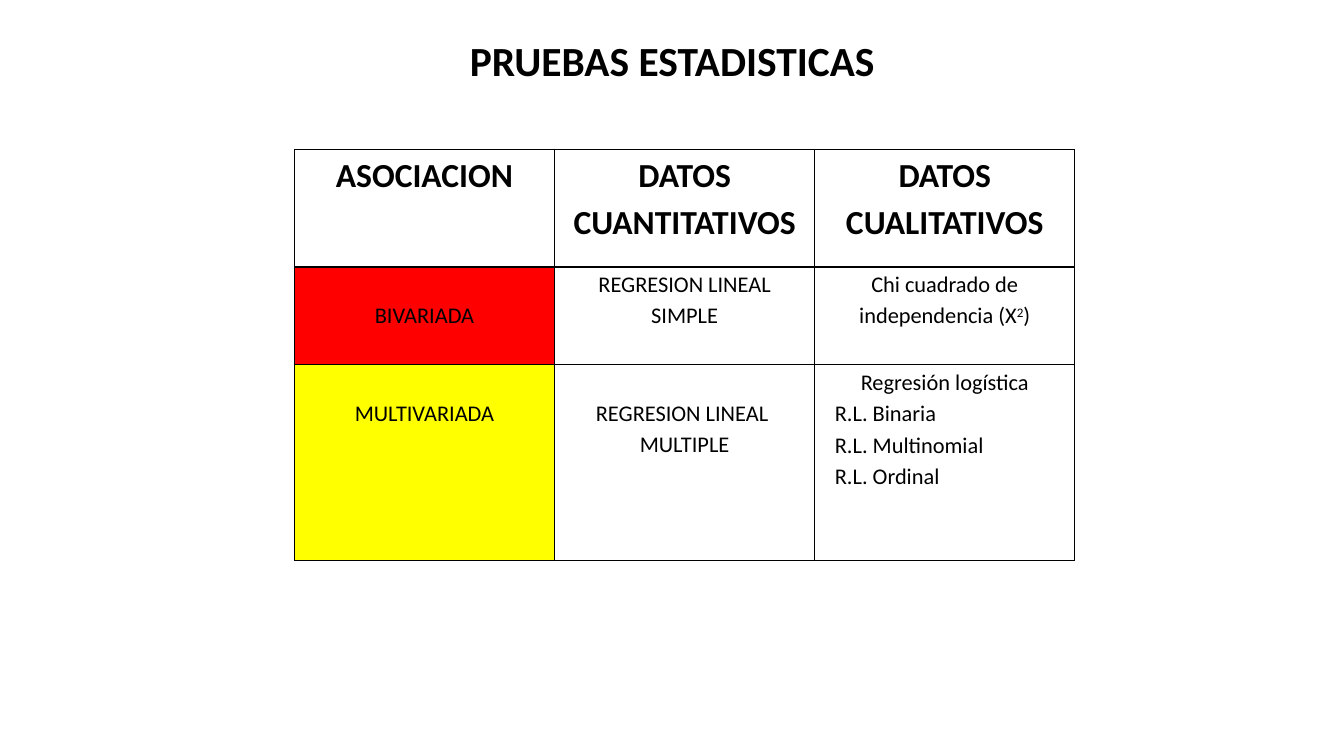
"""Build a slide with a table of statistical tests by kind of association."""
from dataclasses import dataclass

from lxml.etree import SubElement
from pptx import Presentation
from pptx.dml.color import RGBColor as Color
from pptx.enum.text import MSO_ANCHOR as Anchor, MSO_AUTO_SIZE as AutoSize, PP_ALIGN as Align
from pptx.oxml.ns import qn
from pptx.util import Inches, Pt


@dataclass(frozen=True)
class Theme:
    """Colours, type sizes and spacing of the slide."""
    font: str = "Calibri"
    ink: str = "000000"
    red: str = "FF0000"
    yellow: str = "FFFF00"
    title_size: float = 29.6
    header_size: float = 24
    body_size: float = 16
    line_spacing: float = 1.15
    border: float = 1
    side_margin: float = 0.07
    blank_line: float = 0.31
    list_indent: float = 0.13


@dataclass(frozen=True)
class Entry:
    """Content of one table cell; lines after the first may form a list."""
    lines: tuple
    fill: str = ""
    lowered: bool = False
    listed: bool = False


THEME = Theme()
SLIDE_WIDTH, SLIDE_HEIGHT = 13.33, 7.5
TABLE_LEFT, TABLE_TOP = 2.92, 1.48
COLUMN_WIDTH = 2.58
ROW_HEIGHTS = (1.17, 0.97, 1.94)
ROWS = (
    (Entry(("ASOCIACION",)), Entry(("DATOS CUANTITATIVOS",)), Entry(("DATOS CUALITATIVOS",))),
    (
        Entry(("BIVARIADA",), fill=THEME.red, lowered=True),
        Entry(("REGRESION LINEAL", "SIMPLE")),
        Entry(("Chi cuadrado de independencia (X^2^)",)),
    ),
    (
        Entry(("MULTIVARIADA",), fill=THEME.yellow, lowered=True),
        Entry(("REGRESION LINEAL ", "MULTIPLE"), lowered=True),
        Entry(("Regresión logística", "R.L. Binaria", "R.L. Multinomial", "R.L. Ordinal"), listed=True),
    ),
)


def style_paragraph(para, size, bold, align=Align.CENTER):
    """Set the font and alignment of a paragraph."""
    para.alignment = align
    para.font.name = THEME.font
    para.font.size = Pt(size)
    para.font.bold = bold
    para.font.color.rgb = Color.from_string(THEME.ink)


def add_spans(para, text):
    """Add runs, raising the text between carets."""
    for index, part in enumerate(text.split("^")):
        span = para.add_run()
        span.text = part
        if index % 2:
            span.font._element.set("baseline", "30000")


def add_borders(cell):
    """Draw a solid line on each side of a cell."""
    properties = cell._tc.get_or_add_tcPr()
    for side in ("a:lnL", "a:lnR", "a:lnT", "a:lnB"):
        line = SubElement(properties, qn(side), w=str(Pt(THEME.border)))
        paint = SubElement(line, qn("a:solidFill"))
        SubElement(paint, qn("a:srgbClr"), val=THEME.ink)


def fill_cell(cell, entry, is_header):
    """Write and format one table cell."""
    add_borders(cell)
    if entry.fill:
        cell.fill.solid()
        cell.fill.fore_color.rgb = Color.from_string(entry.fill)
    else:
        cell.fill.background()
    cell.margin_left = cell.margin_right = Inches(THEME.side_margin)
    cell.margin_top = Inches(THEME.blank_line if entry.lowered else 0)
    cell.margin_bottom = 0
    cell.vertical_anchor = Anchor.TOP
    size = THEME.header_size if is_header else THEME.body_size
    frame = cell.text_frame
    for index, text in enumerate(entry.lines):
        para = frame.add_paragraph() if index else frame.paragraphs[0]
        in_list = entry.listed and index > 0
        style_paragraph(para, size, is_header, Align.JUSTIFY if in_list else Align.CENTER)
        para.line_spacing = THEME.line_spacing
        if in_list:
            para._p.get_or_add_pPr().set("marL", str(Inches(THEME.list_indent)))
        add_spans(para, text)


def add_title(page, text):
    """Place the centred title across the top of the page."""
    box = page.shapes.title
    box.left, box.top = Inches(2.17), Inches(0.3)
    box.width, box.height = Inches(9), Inches(0.56)
    frame = box.text_frame
    frame.text = text
    frame.word_wrap = True
    frame.auto_size = AutoSize.NONE
    frame.vertical_anchor = Anchor.TOP
    style_paragraph(frame.paragraphs[0], THEME.title_size, True)


def add_test_table(page):
    """Add the table of tests, one row per kind of association."""
    columns = len(ROWS[0])
    table = page.shapes.add_table(
        len(ROWS), columns, Inches(TABLE_LEFT), Inches(TABLE_TOP),
        Inches(columns * COLUMN_WIDTH), Inches(sum(ROW_HEIGHTS)),
    ).table
    table.first_row = table.horz_banding = False
    for column in table.columns:
        column.width = Inches(COLUMN_WIDTH)
    for row_index, (height, entries) in enumerate(zip(ROW_HEIGHTS, ROWS)):
        table.rows[row_index].height = Inches(height)
        for column_index, entry in enumerate(entries):
            fill_cell(table.cell(row_index, column_index), entry, row_index == 0)


def main():
    """Build and save the deck."""
    deck = Presentation()
    deck.slide_width, deck.slide_height = Inches(SLIDE_WIDTH), Inches(SLIDE_HEIGHT)
    page = deck.slides.add_slide(deck.slide_layouts.get_by_name("Title Only"))
    add_title(page, "PRUEBAS ESTADISTICAS")
    add_test_table(page)
    deck.save("out.pptx")


if __name__ == "__main__":
    main()
